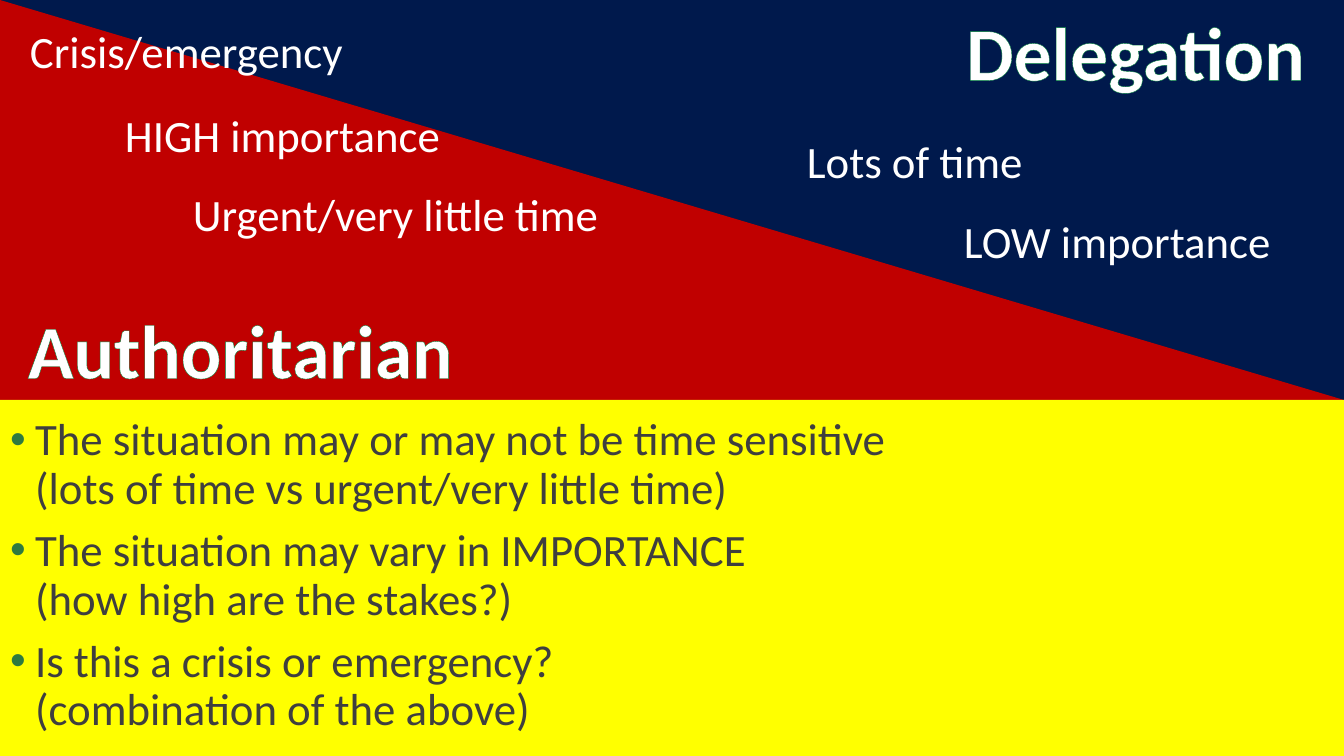
from lxml.etree import SubElement
from pptx import Presentation
from pptx.dml.color import RGBColor as RGB
from pptx.enum.shapes import MSO_SHAPE as SHAPE
from pptx.enum.text import MSO_ANCHOR as ANCHOR, MSO_AUTO_SIZE as FIT, PP_ALIGN as ALIGN
from pptx.oxml.ns import qn
from pptx.util import Pt

WIDE, HIGH, SPLIT = 1344, 756, 400
HEX = {
    "navy": "00194C", "red": "C00000", "yellow": "FFFF00", "white": "FFFFFF",
    "edge": "00843B", "dot": "2E7A40", "ink": "3F3F3F",
}
FACTORS = [
    ("Crisis/emergency", 20, 19, 337),
    ("HIGH importance", 115, 103, 338),
    ("Urgent/very little time", 183, 182, 431),
    ("Lots of time", 797, 129, 239),
    ("LOW importance", 954, 209, 331),
]
POINTS = [
    "The situation may or may not be time sensitive\n(lots of time vs urgent/very little time)",
    "The situation may vary in IMPORTANCE\n(how high are the stakes?)",
    "Is this a crisis or emergency?\n(combination of the above)",
]


def px(num):
    """Turn slide pixels (100.8 to the inch) into EMU."""
    return round(num * 914400 / 100.8)


def tint(node, name):
    """Add a solid colour to an XML node."""
    SubElement(node, qn("a:srgbClr"), val=HEX[name])


def write(par, text, size=32, color="white", bold=False, edge=None, align=ALIGN.LEFT):
    par.text = text
    par.alignment = align
    for run in par.runs:
        font = run.font
        font.name, font.size, font.bold = "Calibri", Pt(size), bold
        font.color.rgb = RGB.from_string(HEX[color])
        if edge:
            props = font._element
            line = SubElement(props, qn("a:ln"), w=str(Pt(0.8)))
            tint(SubElement(line, qn("a:solidFill")), edge)
            props.insert(0, line)


def bullet(par):
    props = par._p.get_or_add_pPr()
    props.set("marL", str(px(25)))
    props.set("indent", str(px(-25)))
    tint(SubElement(props, qn("a:buClr")), "dot")
    SubElement(props, qn("a:buFont"), typeface="Arial")
    SubElement(props, qn("a:buChar"), char="•")


class Deck:
    def __init__(self):
        self.show = Presentation()
        self.show.slide_width, self.show.slide_height = px(WIDE), px(HIGH)
        self.slide = self.show.slides.add_slide(self.show.slide_layouts[1])
        self.shapes = self.slide.shapes

    def panel(self, kind, top, high, color):
        area = self.shapes.add_shape(kind, 0, px(top), px(WIDE), px(high))
        area.shadow.inherit = False
        area.fill.solid()
        area.fill.fore_color.rgb = RGB.from_string(HEX[color])
        area.line.fill.background()

    def place(self, box, left, top, wide, high, wrap=False):
        """Move a text shape to the front and to its spot."""
        self.shapes._spTree.append(box._element)
        box.left, box.top, box.width, box.height = map(px, (left, top, wide, high))
        frame = box.text_frame
        frame.auto_size = FIT.NONE
        frame.word_wrap = wrap
        frame.vertical_anchor = ANCHOR.TOP
        return frame

    def label(self, text, left, top, wide, high=65, box=None, **style):
        box = box or self.shapes.add_textbox(0, 0, 0, 0)
        frame = self.place(box, left, top, wide, high)
        write(frame.paragraphs[0], text, **style)

    def bullets(self, items, left, top, wide, high):
        frame = self.place(self.slide.placeholders[1], left, top, wide, high, wrap=True)
        for num, text in enumerate(items):
            par = frame.add_paragraph() if num else frame.paragraphs[0]
            bullet(par)
            write(par, text, color="ink")
            par.line_spacing = 0.9
            par.space_before = Pt(10 if num else 0)


def main():
    deck = Deck()
    deck.panel(SHAPE.RECTANGLE, 0, SPLIT, "navy")
    deck.panel(SHAPE.RIGHT_TRIANGLE, 0, SPLIT, "red")
    head = dict(high=102, size=54, bold=True, edge="edge", align=ALIGN.CENTER)
    deck.label("Delegation", 954, 0, 363, box=deck.shapes.title, **head)
    deck.label("Authoritarian", 15, 298, 451, **head)
    deck.panel(SHAPE.RECTANGLE, SPLIT, HIGH - SPLIT, "yellow")
    for factor in FACTORS:
        deck.label(*factor)
    deck.bullets(POINTS, 0, 412, 1211, 303)
    deck.show.save("out.pptx")


if __name__ == "__main__":
    main()
